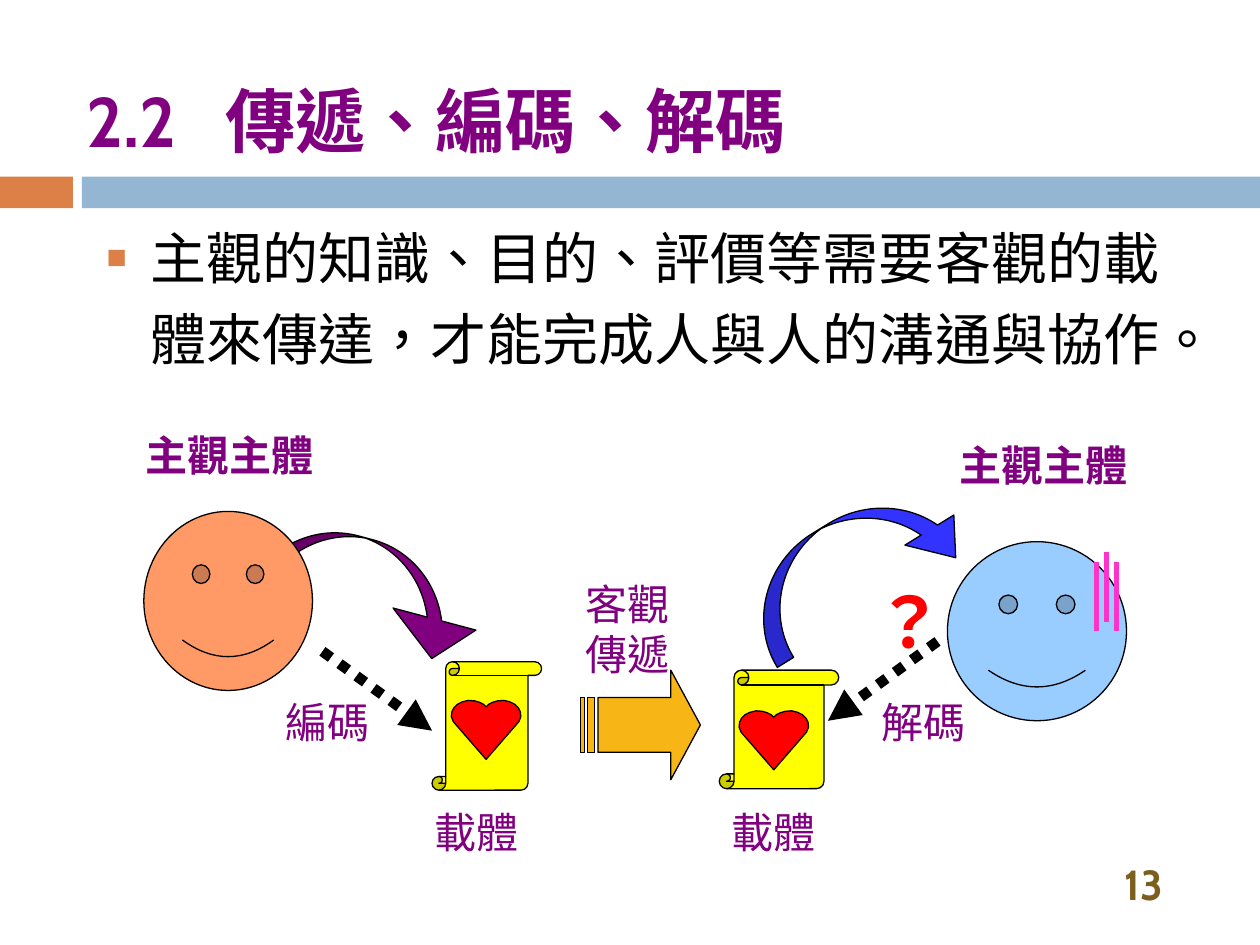
import lxml.etree
import pptx
import pptx.dml.color
import pptx.enum.dml
import pptx.enum.shapes
import pptx.enum.text
import pptx.oxml
import pptx.oxml.ns
import pptx.util

Cm = pptx.util.Cm
Pt = pptx.util.Pt
SHAPE = pptx.enum.shapes.MSO_SHAPE
ANCHOR = pptx.enum.text.MSO_ANCHOR
ALIGN = pptx.enum.text.PP_ALIGN
qn = pptx.oxml.ns.qn
PURPLE = "800080"
NOTO = "Noto Sans CJK TC"

presentation = pptx.Presentation()
presentation.slide_width = Cm(25.4)
presentation.slide_height = Cm(19.05)
slide = presentation.slides.add_slide(presentation.slide_layouts[6])
shapes = slide.shapes


def paint(shape, fill, outlined=True):
    shape.shadow.inherit = False
    shape.fill.solid()
    shape.fill.fore_color.rgb = pptx.dml.color.RGBColor.from_string(fill)
    if outlined:
        shape.line.color.rgb = pptx.dml.color.RGBColor.from_string("000000")
        shape.line.width = Pt(0.75)
    else:
        shape.line.fill.background()


def add_text(box, lines, size, font, color, bold=False, align=ALIGN.LEFT,
             anchor=ANCHOR.TOP, wrap=True):
    text_frame = shapes.add_textbox(*[Cm(length) for length in box]).text_frame
    text_frame.word_wrap = wrap
    text_frame.vertical_anchor = anchor
    for index, line in enumerate(lines):
        paragraph = text_frame.add_paragraph() if index else text_frame.paragraphs[0]
        paragraph.alignment = align
        run = paragraph.add_run()
        run.text = line
        run.font.size = Pt(size)
        run.font.bold = bold
        run.font.color.rgb = pptx.dml.color.RGBColor.from_string(color)
        run.font.name = font
        # Cabin sets the line height; the Chinese glyphs come from its fallback
        properties = run.font._element
        properties.set("lang", "zh-TW")
        lxml.etree.SubElement(properties, qn("a:ea"), typeface="Cabin")
    return text_frame.paragraphs[0]


# Band under the title
for left, width, color in [(0, 1.47, "DD8047"), (1.65, 23.75, "94B6D2")]:
    band = shapes.add_shape(SHAPE.RECTANGLE, Cm(left), Cm(3.56), Cm(width), Cm(0.64))
    paint(band, color, outlined=False)

# Title, with a tab stop after the section number
title = add_text((1.5, 0.91, 22.63, 3), ["2.2\t傳遞、編碼、解碼"], 40, "Cabin", PURPLE,
                 bold=True, anchor=ANCHOR.MIDDLE)
tab_list = lxml.etree.SubElement(title._p.get_or_add_pPr(), qn("a:tabLst"))
lxml.etree.SubElement(tab_list, qn("a:tab"), pos=str(Cm(2.8)), algn="l")

# Slide number
add_text((21.89, 17.32, 1.8, 0.99), ["13"], 24, "Cabin", "7C5F1E", bold=True,
         align=ALIGN.RIGHT, anchor=ANCHOR.MIDDLE)

# Body with a square bullet
body = add_text((1.9, 4.11, 21.92, 3.61),
                ["主觀的知識、目的、評價等需要客觀的載體來傳達，才能完成人與人的溝通與協作。"],
                32, "Cabin", "000000")
body.line_spacing = 1.2
body.space_before = Pt(7)
body_properties = body._p.get_or_add_pPr()
body_properties.set("marL", str(Cm(0.89)))
body_properties.set("indent", str(-Cm(0.89)))
bullet_color = lxml.etree.SubElement(body_properties, qn("a:buClr"))
lxml.etree.SubElement(bullet_color, qn("a:srgbClr"), val="DD8047")
lxml.etree.SubElement(body_properties, qn("a:buSzPct"), val="60000")
lxml.etree.SubElement(body_properties, qn("a:buFont"), typeface="Arial")
lxml.etree.SubElement(body_properties, qn("a:buChar"), char="■")

# Faces, scrolls and arrows, from back to front
for kind, box, color, rotation, adjustments in [
    (SHAPE.VERTICAL_SCROLL, (8.71, 13.34, 2.21, 2.59), "FFFF00", 0, []),
    (SHAPE.CURVED_DOWN_ARROW, (5.03, 10.9, 4.85, 2.01), PURPLE, 14.9, [0.15, 0.86, 0.39]),
    (SHAPE.SMILEY_FACE, (19.1, 10.92, 3.61, 3.61), "99CCFF", 0, []),
    (SHAPE.SMILEY_FACE, (2.9, 10.31, 3.4, 3.61), "FF9966", 0, []),
    (SHAPE.STRIPED_RIGHT_ARROW, (11.71, 13.51, 2.41, 2.21), "F7B615", 0, [0.5, 0.27]),
    (SHAPE.VERTICAL_SCROLL, (14.5, 13.51, 2.41, 2.39), "FFFF00", 0, []),
    (SHAPE.CURVED_DOWN_ARROW, (14.81, 10.41, 4.8, 1.93), "3333FF", 328.4, [0.2, 0.6, 0.39]),
]:
    shape = shapes.add_shape(kind, *[Cm(length) for length in box])
    shape.rotation = rotation
    for index, value in enumerate(adjustments):
        shape.adjustments[index] = value
    paint(shape, color)

# Hearts: one half outline, mirrored about the centre line
half_heart = [(0.05, 0.08), (0.13, 0.04), (0.23, 0.01), (0.36, 0), (0.48, 0.03), (0.58, 0.08),
              (0.65, 0.15), (0.69, 0.23), (0.7, 0.33), (0.66, 0.43)]
outline = ([(-x, y) for x, y in half_heart] + [(0, 1.19)] + half_heart[::-1])
for center, top in [(9.8, 14.12), (15.6, 14.33)]:
    builder = shapes.build_freeform(Cm(center), Cm(top + 0.13))
    builder.add_line_segments([(Cm(center + x), Cm(top + y)) for x, y in outline], close=True)
    paint(builder.convert_to_shape(), "FF0000")

# Dotted arrows and the three pink strokes
for start_x, start_y, end_x, end_y, color, width, dotted in [
    (18.9, 12.93, 16.69, 14.53, "000000", 6, True),
    (6.5, 13.13, 8.71, 14.73, "000000", 6, True),
    (22.1, 11.33, 22.1, 12.73, "FF33CC", 3, False),
    (22.3, 11.13, 22.3, 12.53, "FF33CC", 3, False),
    (22.5, 11.33, 22.5, 12.73, "FF33CC", 3, False),
]:
    connector = shapes.add_connector(pptx.enum.shapes.MSO_CONNECTOR.STRAIGHT,
                                     Cm(start_x), Cm(start_y), Cm(end_x), Cm(end_y))
    connector.line.color.rgb = pptx.dml.color.RGBColor.from_string(color)
    connector.line.width = Pt(width)
    if dotted:
        connector.line.dash_style = pptx.enum.dml.MSO_LINE.ROUND_DOT
        lxml.etree.SubElement(connector.line._get_or_add_ln(), qn("a:tailEnd"), type="triangle")
    lxml.etree.SubElement(connector._element.spPr, qn("a:effectLst"))

# Labels
add_text((16.89, 11.53, 2.39, 1.96), ["？"], 40, NOTO, "FF0000", bold=True, align=ALIGN.RIGHT)
for box, lines, bold in [
    ((11.51, 11.53, 2.24, 2.31), ["客觀", "傳遞"], False),
    ((19.1, 8.74, 3.89, 1.27), ["主觀主體"], True),
    ((2.69, 8.53, 3.89, 1.27), ["主觀主體"], True),
    ((5.49, 13.92, 2.21, 1.27), ["編碼"], False),
    ((17.5, 13.92, 2.21, 1.27), ["解碼"], False),
]:
    add_text(box, lines, 24, NOTO, PURPLE, bold=bold, align=ALIGN.RIGHT, wrap=False)
for left in (8.51, 14.5):
    add_text((left, 16.13, 2.24, 1.3), ["載體"], 24, "Arial", PURPLE, wrap=False)

presentation.save("out.pptx")
